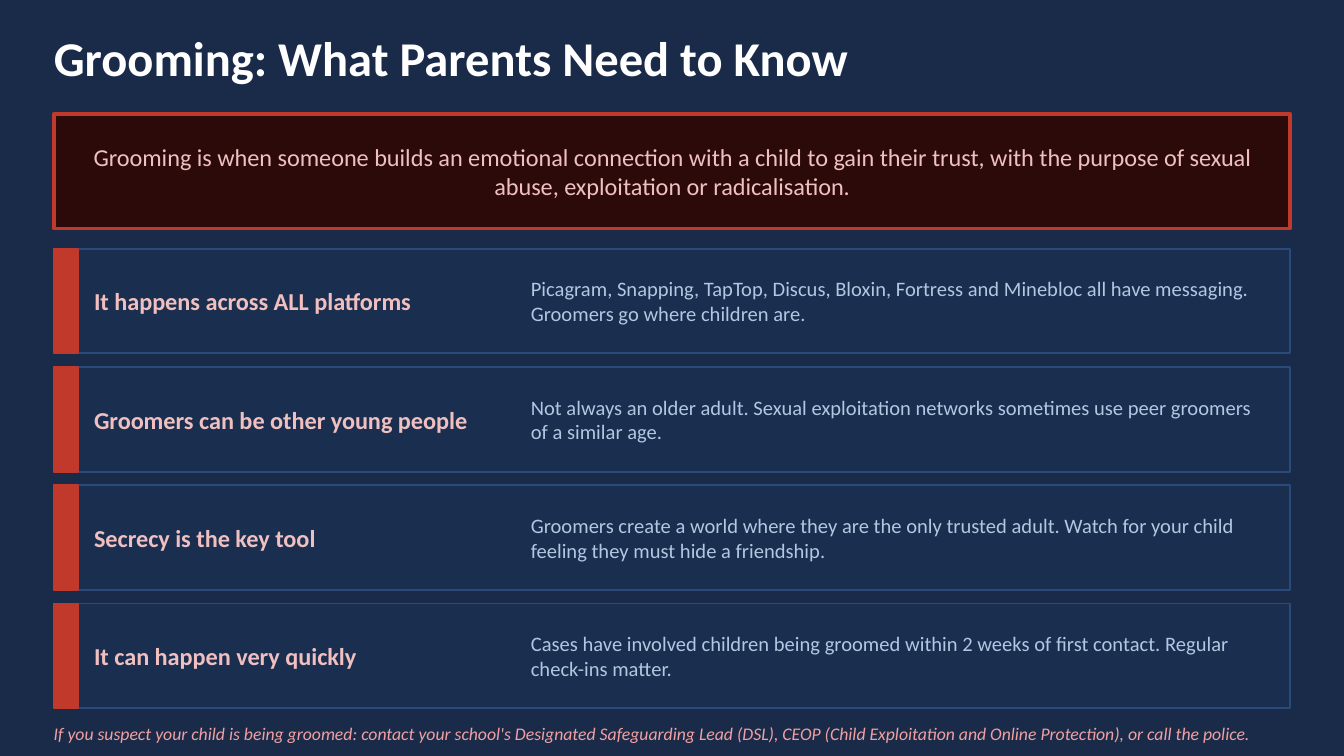
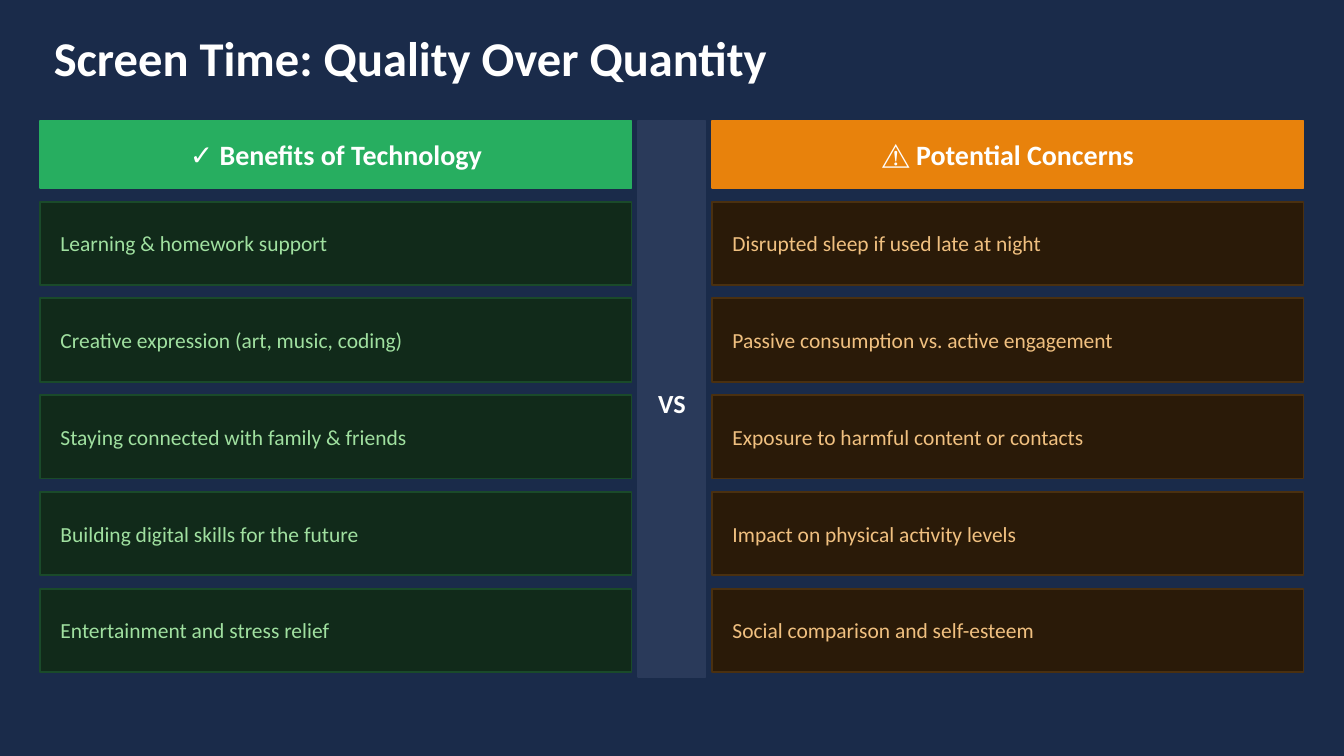
from dataclasses import dataclass

import pptx
import pptx.dml.color
import pptx.enum.shapes
import pptx.enum.text
import pptx.util

ALIGN = pptx.enum.text.PP_ALIGN

GROOMING = {
    "title": "Grooming: What Parents Need to Know",
    "definition": "Grooming is when someone builds an emotional connection with a child to gain "
                  "their trust, with the purpose of sexual abuse, exploitation or radicalisation.",
    "facts": [
        ("It happens across ALL platforms",
         "Picagram, Snapping, TapTop, Discus, Bloxin, Fortress and Minebloc all have "
         "messaging. Groomers go where children are."),
        ("Groomers can be other young people",
         "Not always an older adult. Sexual exploitation networks sometimes use peer groomers "
         "of a similar age."),
        ("Secrecy is the key tool",
         "Groomers create a world where they are the only trusted adult. Watch for your child "
         "feeling they must hide a friendship."),
        ("It can happen very quickly",
         "Cases have involved children being groomed within 2 weeks of first contact. Regular "
         "check-ins matter."),
    ],
    "advice": "If you suspect your child is being groomed: contact your school's Designated "
              "Safeguarding Lead (DSL), CEOP (Child Exploitation and Online Protection), "
              "or call the police.",
}

SCREEN_TIME = {
    "title": "Screen Time: Quality Over Quantity",
    "divider": "VS",
    "columns": [
        ("✓ Benefits of Technology", "benefit", [
            "Learning & homework support",
            "Creative expression (art, music, coding)",
            "Staying connected with family & friends",
            "Building digital skills for the future",
            "Entertainment and stress relief",
        ]),
        ("⚠ Potential Concerns", "concern", [
            "Disrupted sleep if used late at night",
            "Passive consumption vs. active engagement",
            "Exposure to harmful content or contacts",
            "Impact on physical activity levels",
            "Social comparison and self-esteem",
        ]),
    ],
}


@dataclass(frozen=True)
class ColumnColours:
    header: str
    fill: str
    line: str
    text: str


class Theme:
    font = "Calibri"
    background = "1A2B4A"
    white = "FFFFFF"
    alert = "C0392B"
    alert_fill = "2C0A0A"
    alert_text = "F0C0C0"
    advice_text = "F0A0A0"
    card_fill = "1A2E50"
    card_line = "2A4A7A"
    card_text = "B0C8E0"
    divider = "2A3A5A"
    columns = {
        "benefit": ColumnColours("27AE60", "112A1A", "1A4A2A", "A0E0A0"),
        "concern": ColumnColours("E8820C", "2A1A08", "4A3010", "F0C080"),
    }
    title_size = 26
    header_size = 15
    divider_size = 14
    lead_size = 13
    item_size = 11.5
    detail_size = 11
    advice_size = 9.5


WIDTH = 10
HEIGHT = WIDTH * 9 / 16
MARGIN = 0.4
CONTENT_WIDTH = WIDTH - 2 * MARGIN
GAP = 0.1


def inches(*lengths):
    return [pptx.util.Inches(round(length, 3)) for length in lengths]


def rgb(colour):
    return pptx.dml.color.RGBColor.from_string(colour)


def write(shape, text, size, colour, bold=False, italic=False, align=ALIGN.LEFT, inset=0):
    """Set vertically centred, wrapped text; inset is the left and right margin."""
    frame = shape.text_frame
    frame.text = text
    frame.word_wrap = True
    frame.auto_size = pptx.enum.text.MSO_AUTO_SIZE.NONE
    frame.vertical_anchor = pptx.enum.text.MSO_ANCHOR.MIDDLE
    frame.margin_left = frame.margin_right = pptx.util.Inches(inset)
    frame.margin_top = frame.margin_bottom = 0
    paragraph = frame.paragraphs[0]
    paragraph.alignment = align
    for run in paragraph.runs:
        run.font.name = Theme.font
        run.font.size = pptx.util.Pt(size)
        run.font.color.rgb = rgb(colour)
        run.font.bold = bold
        run.font.italic = italic


def add_box(slide, box, fill, line, line_width=1):
    shape = slide.shapes.add_shape(pptx.enum.shapes.MSO_SHAPE.RECTANGLE, *inches(*box))
    shape.shadow.inherit = False
    shape.fill.solid()
    shape.fill.fore_color.rgb = rgb(fill)
    shape.line.color.rgb = rgb(line)
    shape.line.width = pptx.util.Pt(line_width)
    return shape


def add_label(slide, box, text, size, colour, **style):
    write(slide.shapes.add_textbox(*inches(*box)), text, size, colour, **style)


def prepare_layout(presentation):
    """Give the title-only layout the shared background and title place."""
    layout = presentation.slide_layouts.get_by_name("Title Only")
    layout.background.fill.solid()
    layout.background.fill.fore_color.rgb = rgb(Theme.background)
    title = layout.placeholders[0]
    title.left, title.top, title.width, title.height = inches(MARGIN, 0.1, CONTENT_WIDTH, 0.65)
    return layout


def add_titled_slide(presentation, layout, title):
    slide = presentation.slides.add_slide(layout)
    write(slide.shapes.title, title, Theme.title_size, Theme.white, bold=True)
    return slide


def add_fact_card(slide, top, heading, detail):
    """Draw one card and return the top of the next."""
    height = 0.78
    add_box(slide, (MARGIN, top, CONTENT_WIDTH, height), Theme.card_fill, Theme.card_line)
    add_box(slide, (MARGIN, top, 0.18, height), Theme.alert, Theme.alert)
    add_label(slide, (MARGIN + 0.3, top, 3.2, height), heading,
              Theme.lead_size, Theme.alert_text, bold=True)
    add_label(slide, (MARGIN + 3.55, top, 5.5, height), detail,
              Theme.detail_size, Theme.card_text)
    return top + height + GAP


def build_grooming(presentation, layout):
    slide = add_titled_slide(presentation, layout, GROOMING["title"])
    definition = add_box(slide, (MARGIN, 0.85, CONTENT_WIDTH, 0.85),
                         Theme.alert_fill, Theme.alert, line_width=2)
    write(definition, GROOMING["definition"], Theme.lead_size, Theme.alert_text,
          align=ALIGN.CENTER, inset=0.11)
    top = 1.85
    for heading, detail in GROOMING["facts"]:
        top = add_fact_card(slide, top, heading, detail)
    add_label(slide, (MARGIN, 5.35, CONTENT_WIDTH, 0.22), GROOMING["advice"],
              Theme.advice_size, Theme.advice_text, italic=True)


def add_column(slide, left, top, width, header, colours, items):
    header_height, item_height = 0.5, 0.62
    banner = add_box(slide, (left, top, width, header_height), colours.header, colours.header)
    write(banner, header, Theme.header_size, Theme.white, bold=True, align=ALIGN.CENTER)
    first = top + header_height + GAP
    for row, item in enumerate(items):
        box = (left, first + row * (item_height + GAP), width, item_height)
        write(add_box(slide, box, colours.fill, colours.line), item,
              Theme.item_size, colours.text, inset=0.15)


def build_screen_time(presentation, layout):
    slide = add_titled_slide(presentation, layout, SCREEN_TIME["title"])
    margin, top, column_width, divider_width = 0.3, 0.9, 4.4, 0.5
    lefts = (margin, WIDTH - margin - column_width)
    for left, (header, kind, items) in zip(lefts, SCREEN_TIME["columns"]):
        add_column(slide, left, top, column_width, header, Theme.columns[kind], items)
    divider_left = (WIDTH - divider_width) / 2
    add_box(slide, (divider_left, top, divider_width, 4.14), Theme.divider, Theme.divider)
    add_label(slide, (divider_left, 2.8, divider_width, 0.4), SCREEN_TIME["divider"],
              Theme.divider_size, Theme.white, bold=True, align=ALIGN.CENTER)


def main():
    presentation = pptx.Presentation()
    presentation.slide_width, presentation.slide_height = inches(WIDTH, HEIGHT)
    layout = prepare_layout(presentation)
    build_grooming(presentation, layout)
    build_screen_time(presentation, layout)
    presentation.save("out.pptx")


if __name__ == "__main__":
    main()
